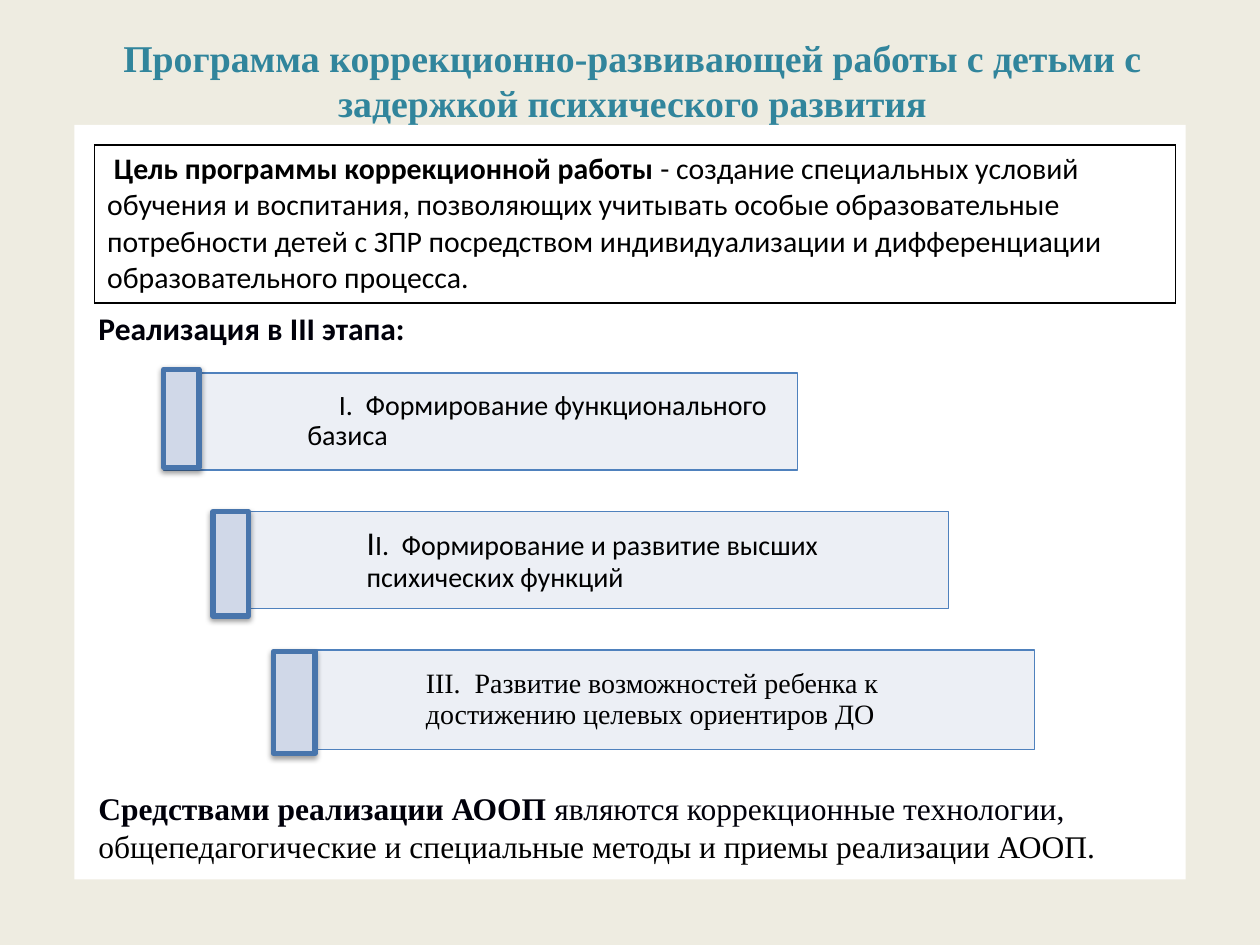
"""Build the slide on the correctional programme for children with developmental delay."""
from lxml.etree import SubElement
from pptx import Presentation
from pptx.dml.color import RGBColor
from pptx.enum.shapes import MSO_SHAPE
from pptx.enum.text import MSO_ANCHOR, MSO_AUTO_SIZE, PP_ALIGN
from pptx.oxml import parse_xml
from pptx.oxml.ns import nsdecls, qn
from pptx.util import Inches, Pt

THEME = {
    "sans": "Calibri", "serif": "Times New Roman",
    "back": "EEECE1", "head": "31859C", "ink": "000000", "dark": "00000A",
    "white": "FFFFFF", "fill": "D0D8E8", "edge": "4F81BD", "rim": "4875AC",
    "title": 21.6, "body": 18, "goal": 17, "step": 16, "large": 19,
}

TITLE = "Программа коррекционно-развивающей работы с детьми с задержкой психического развития"
GOAL = [
    (" Цель программы коррекционной работы ", {"bold": True}),
    ("- создание специальных условий обучения и воспитания, позволяющих учитывать особые "
     "образовательные потребности детей с ЗПР посредством индивидуализации и "
     "дифференциации образовательного процесса.", {}),
]
INTRO = [("Реализация в III этапа:", {"bold": True})]
MEANS = [
    ("Средствами реализации АООП ", {"bold": True}),
    ("являются коррекционные технологии, ", {}),
    ("общепедагогические и специальные методы и приемы реализации АООП.",
     {"color": THEME["ink"]}),
]
STEPS = [
    {"runs": [("I.  Формирование функционального базиса", {})],
     "font": "sans", "first": 0.25, "box": (5.03, 0.77), "bar": (1.3, 2.93, 0.28, 0.78)},
    {"runs": [("I", {"size": THEME["large"]}),
              ("I.  Формирование и развитие высших психических функций", {})],
     "font": "sans", "first": 0, "box": (5.76, 0.77), "bar": (1.69, 4.06, 0.28, 0.83)},
    {"runs": [("III.  Развитие возможностей ребенка к достижению целевых ориентиров ДО", {})],
     "font": "serif", "first": 0, "box": (5.97, 0.79), "bar": (2.17, 5.17, 0.33, 0.81)},
]
LEFT, TOP, SHIFT, DROP = 1.3, 2.96, 0.47, 1.1


def tint(code):
    return RGBColor.from_string(code)


def place(shape, *spot):
    shape.left, shape.top, shape.width, shape.height = map(Inches, spot)


def setup(frame, anchor, pad=(0.1, 0.05, 0.1, 0.05)):
    frame.word_wrap = True
    frame.auto_size = MSO_AUTO_SIZE.NONE
    frame.vertical_anchor = anchor
    (frame.margin_left, frame.margin_top,
     frame.margin_right, frame.margin_bottom) = map(Inches, pad)


def write(para, text, size=18, font="Calibri", color="000000", bold=False,
          align=PP_ALIGN.LEFT, lead=1.0, before=0, left=0, first=0):
    props = para._p.get_or_add_pPr()
    props.set("marL", str(Inches(left)))
    props.set("indent", str(Inches(first)))
    SubElement(props, qn("a:buNone"))
    para.alignment, para.line_spacing = align, lead
    para.space_before = Pt(before)
    base = {"size": size, "color": color, "bold": bold}
    for words, extra in [(text, {})] if isinstance(text, str) else text:
        look = base | extra
        run = para.add_run()
        run.text = words
        run.font.name, run.font.size = font, Pt(look["size"])
        run.font.bold = look["bold"]
        run.font.color.rgb = tint(look["color"])


def block(slide, spot, edge, width, alpha=100):
    shape = slide.shapes.add_shape(MSO_SHAPE.RECTANGLE, *map(Inches, spot))
    shape.shadow.inherit = False
    shape.fill.solid()
    shape.fill.fore_color.rgb = tint(THEME["fill"])
    if alpha < 100:
        shade = shape.fill._xPr.find(".//" + qn("a:srgbClr"))
        SubElement(shade, qn("a:alpha"), val=str(alpha * 1000))
    shape.line.color.rgb = tint(edge)
    shape.line.width = Pt(width)
    return shape


def cast(shape):
    effects = shape._element.spPr.find(qn("a:effectLst"))
    effects.append(parse_xml(
        f'<a:outerShdw {nsdecls("a")} blurRad="{Pt(3.1)}" dist="{Pt(1.6)}" dir="5400000" '
        f'rotWithShape="0"><a:srgbClr val="{THEME["ink"]}"><a:alpha val="38000"/>'
        '</a:srgbClr></a:outerShdw>'))


def border(cell):
    props = cell._tc.get_or_add_tcPr()
    for spot, side in enumerate(("lnL", "lnR", "lnT", "lnB")):
        props.insert(spot, parse_xml(
            f'<a:{side} {nsdecls("a")} w="{Pt(1)}"><a:solidFill>'
            f'<a:srgbClr val="{THEME["ink"]}"/></a:solidFill></a:{side}>'))


def steps(slide):
    for row, step in enumerate(STEPS):
        spot = (LEFT + row * SHIFT, TOP + row * DROP, *step["box"])
        box = block(slide, spot, THEME["edge"], 0.75, alpha=40)
        setup(box.text_frame, MSO_ANCHOR.MIDDLE, (1.14, 0.07, 0.07, 0.07))
        write(box.text_frame.paragraphs[0], step["runs"], size=THEME["step"],
              font=THEME[step["font"]], lead=0.9, first=step["first"])
        cast(block(slide, step["bar"], THEME["rim"], 3))


def goal(slide):
    table = slide.shapes.add_table(1, 1, *map(Inches, (0.75, 1.15, 8.58, 1.23))).table
    table.first_row = table.horz_banding = False
    cell = table.cell(0, 0)
    cell.fill.solid()
    cell.fill.fore_color.rgb = tint(THEME["white"])
    border(cell)
    write(cell.text_frame.paragraphs[0], GOAL, size=THEME["goal"], font=THEME["sans"])


def main():
    deck = Presentation()
    deck.slide_width, deck.slide_height = Inches(10), Inches(7.5)
    slide = deck.slides.add_slide(deck.slide_layouts[1])
    slide.background.fill.solid()
    slide.background.fill.fore_color.rgb = tint(THEME["back"])

    title, body = slide.placeholders
    place(title, 0.59, 0.21, 8.86, 0.85)
    setup(title.text_frame, MSO_ANCHOR.MIDDLE)
    write(title.text_frame.paragraphs[0], TITLE, size=THEME["title"], font=THEME["serif"],
          color=THEME["head"], bold=True, align=PP_ALIGN.CENTER, lead=Pt(26))

    place(body, 0.59, 0.99, 8.82, 5.99)
    body.fill.solid()
    body.fill.fore_color.rgb = tint(THEME["white"])
    frame = body.text_frame
    setup(frame, MSO_ANCHOR.TOP, (0.1, 1.46, 0.1, 0.05))
    look = {"size": THEME["body"], "color": THEME["dark"], "lead": Pt(22), "left": 0.09}
    write(frame.paragraphs[0], INTRO, font=THEME["sans"], **look)
    write(frame.add_paragraph(), MEANS, font=THEME["serif"], before=252, **look)

    steps(slide)
    goal(slide)
    deck.save("out.pptx")


if __name__ == "__main__":
    main()
